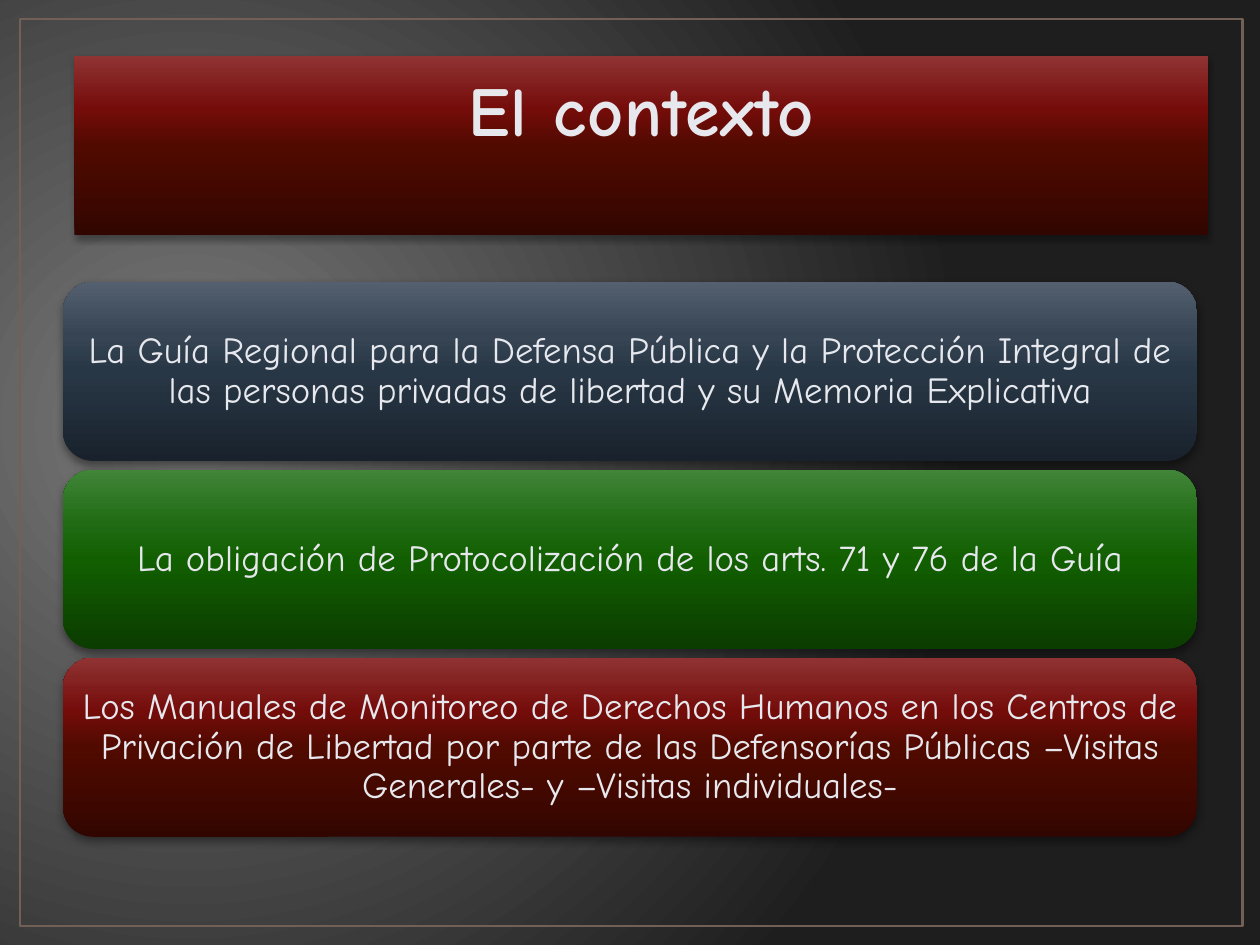
from lxml import etree
from pptx import Presentation
from pptx.dml.color import RGBColor
from pptx.enum.shapes import MSO_SHAPE
from pptx.enum.text import MSO_ANCHOR, MSO_AUTO_SIZE, PP_ALIGN
from pptx.oxml import parse_xml
from pptx.oxml.ns import nsdecls, qn
from pptx.util import Pt

RECTANGLE, ROUNDED = MSO_SHAPE.RECTANGLE, MSO_SHAPE.ROUNDED_RECTANGLE
TOP, MIDDLE = MSO_ANCHOR.TOP, MSO_ANCHOR.MIDDLE
CENTER, NO_FIT = PP_ALIGN.CENTER, MSO_AUTO_SIZE.NONE

THEME = {
    "font": "Comic Neue",
    "title_size": 40,
    "body_size": 21,
    "text": "E6E8EE",
    "frame": "726056",
    "backdrop": [(0, "7A7A7A"), (100, "1E1E1E")],
    "slate": [(0, "19222C"), (50, "283746"), (70, "364454"), (100, "54606F")],
    "green": [(0, "0B3C00"), (50, "125F01"), (70, "206B14"), (100, "418538")],
    "red": [(0, "320600"), (50, "510A00"), (70, "740C0A"), (100, "8F3332")],
}
UPWARD = '<a:lin ang="16200000" scaled="0"/>'
RADIAL = '<a:path path="circle"><a:fillToRect l="15000" t="50000" r="85000" b="60000"/></a:path>'


def paint_gradient(owner, fill, stops, direction):
    """Fill a shape or the page background with any number of colour stops."""
    fill.gradient()
    gradient = next(owner.element.iter(qn("a:gradFill")))
    marks = "".join(
        f'<a:gs pos="{place * 1000}"><a:srgbClr val="{color}"/></a:gs>' for place, color in stops
    )
    gradient.getparent().replace(gradient, parse_xml(
        f'<a:gradFill rotWithShape="1" {nsdecls("a")}><a:gsLst>{marks}</a:gsLst>{direction}</a:gradFill>'
    ))


def style_panel(panel, stops, text, size, anchor, opacity, blur, distance):
    """Give a panel its gradient, shadow and centred text."""
    paint_gradient(panel, panel.fill, stops, UPWARD)
    panel.line.fill.background()
    effects = etree.SubElement(panel.element.spPr, qn("a:effectLst"))
    effects.append(parse_xml(
        f'<a:outerShdw {nsdecls("a")} blurRad="{Pt(blur)}" dist="{Pt(distance)}" dir="5400000" '
        f'rotWithShape="0"><a:srgbClr val="000000"><a:alpha val="{opacity * 1000}"/></a:srgbClr></a:outerShdw>'
    ))
    box = panel.text_frame
    box.word_wrap = True
    box.auto_size = NO_FIT
    box.vertical_anchor = anchor
    box.margin_left = box.margin_right = box.margin_top = box.margin_bottom = Pt(6)
    para = box.paragraphs[0]
    para.text = text
    para.alignment = CENTER
    para.font.name = THEME["font"]
    para.font.size = Pt(size)
    para.font.color.rgb = RGBColor.from_string(THEME["text"])
    return para


deck = Presentation()
deck.slide_width, deck.slide_height = Pt(720), Pt(540)
page = deck.slides.add_slide(deck.slide_layouts[5])
paint_gradient(page, page.background.fill, THEME["backdrop"], RADIAL)

# Thin frame, behind everything else
title = page.shapes.title
frame = page.shapes.add_shape(RECTANGLE, Pt(11.5), Pt(10.8), Pt(698.4), Pt(518.4))
frame.shadow.inherit = False
frame.fill.background()
frame.line.color.rgb = RGBColor.from_string(THEME["frame"])
frame.line.width = Pt(1.5)
title.element.addprevious(frame.element)

# Title banner
title.left, title.top, title.width, title.height = Pt(42.5), Pt(32), Pt(648), Pt(102.4)
heading = style_panel(title, THEME["red"], "El contexto", THEME["title_size"], TOP, 32, 3.5, 2.2)
heading.font.bold = True
heading.runs[0].font.bold = True
heading.runs[0].font._element.set("spc", "50")

# Three stacked panels
panels = [
    ("slate", "La Guía Regional para la Defensa Pública y la Protección Integral de las personas "
              "privadas de libertad y su Memoria Explicativa"),
    ("green", "La obligación de Protocolización de los arts. 71 y 76 de la Guía"),
    ("red", "Los Manuales de Monitoreo de Derechos Humanos en los Centros de Privación de Libertad "
            "por parte de las Defensorías Públicas –Visitas Generales- y –Visitas individuales-"),
]
for row, (color, text) in enumerate(panels):
    panel = page.shapes.add_shape(ROUNDED, Pt(36), Pt(161 + row * 107.4), Pt(648), Pt(102.4))
    para = style_panel(panel, THEME[color], text, THEME["body_size"], MIDDLE, 43, 5, 2)
    para.line_spacing = 0.9

deck.save("out.pptx")
